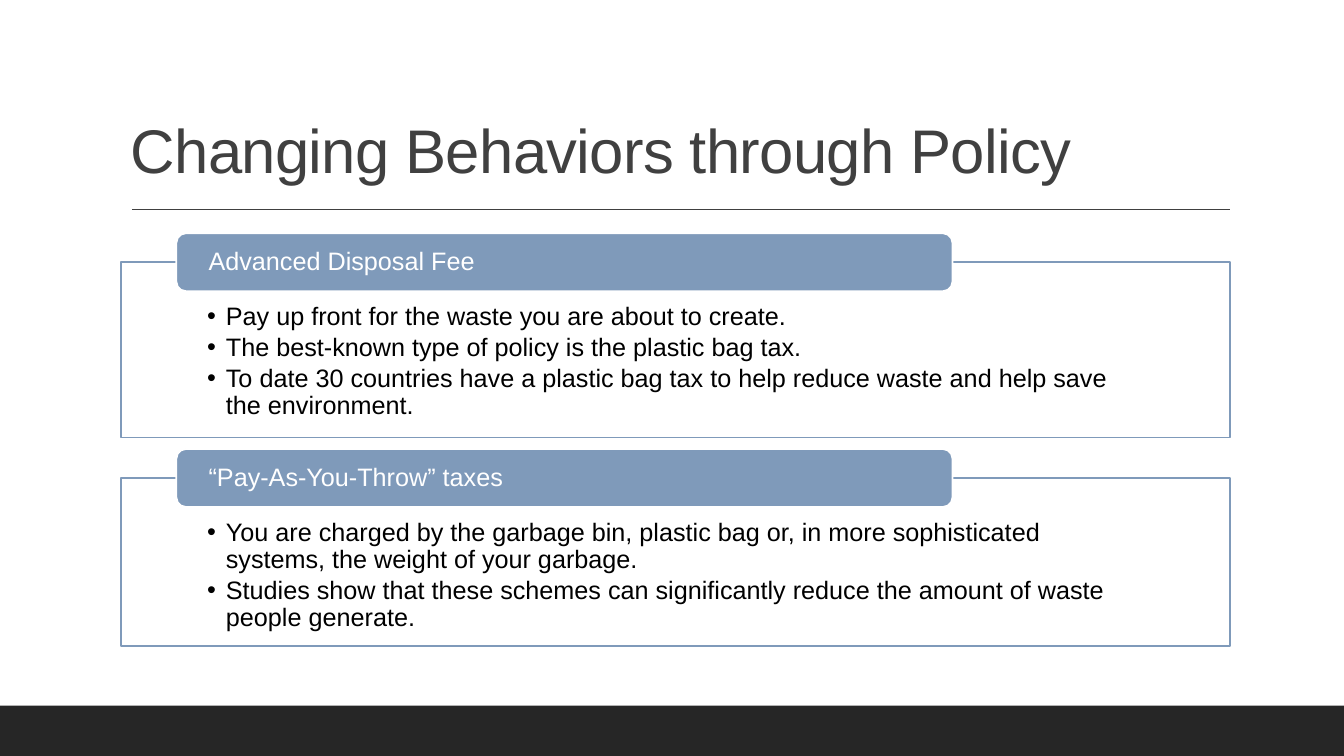
from lxml.etree import SubElement
from pptx import Presentation
from pptx.dml.color import RGBColor
from pptx.enum.shapes import MSO_CONNECTOR, MSO_SHAPE
from pptx.enum.text import MSO_ANCHOR, PP_ALIGN
from pptx.oxml.ns import qn
from pptx.util import Pt

TITLE = "Changing Behaviors through Policy"
POLICIES = [
    ("Advanced Disposal Fee", 125.3, [
        "Pay up front for the waste you are about to create.",
        "The best-known type of policy is the plastic bag tax.",
        "To date 30 countries have a plastic bag tax to help reduce waste and help save the environment.",
    ]),
    ("“Pay-As-You-Throw” taxes", 120.2, [
        "You are charged by the garbage bin, plastic bag or, in more sophisticated systems, the weight of your garbage.",
        "Studies show that these schemes can significantly reduce the amount of waste people generate.",
    ]),
]
COLORS = {"white": "FFFFFF", "black": "000000", "ink": "404040", "footer": "262626", "blue": "7F9ABA"}
FONT = "Arial"
SLIDE_WIDTH, SLIDE_HEIGHT = 960, 540
PANEL_LEFT, PANEL_WIDTH, FIRST_PANEL_TOP, PANEL_GAP = 86.4, 792, 187.3, 28.8
HEADER_LEFT, HEADER_WIDTH, HEADER_HEIGHT = 126, 554.4, 41.4
FOOTER_HEIGHT = 36
BULLET_INDENT = 13.5


def color(name):
    return RGBColor.from_string(COLORS[name])


def add_block(page, kind, left, top, width, height, fill, line=None):
    block = page.shapes.add_shape(kind, Pt(left), Pt(top), Pt(width), Pt(height))
    block.shadow.inherit = False
    block.fill.solid()
    block.fill.fore_color.rgb = color(fill)
    if line:
        block.line.color.rgb = color(line)
        block.line.width = Pt(1.25)
    else:
        block.line.fill.background()
    return block


def set_frame(shape, anchor, margins):
    frame = shape.text_frame
    frame.word_wrap = True
    frame.vertical_anchor = anchor
    frame.margin_left, frame.margin_top, frame.margin_right, frame.margin_bottom = map(Pt, margins)
    return frame


def write(para, text, size, ink):
    para.alignment = PP_ALIGN.LEFT
    para.line_spacing = 0.9
    span = para.add_run()
    span.text = text
    span.font.name = FONT
    span.font.size = Pt(size)
    span.font.color.rgb = color(ink)
    return span


def add_bullet(para):
    para.space_after = Pt(2.7)
    properties = para._p.get_or_add_pPr()
    properties.set("marL", str(Pt(BULLET_INDENT)))
    properties.set("indent", str(-Pt(BULLET_INDENT)))
    SubElement(properties, qn("a:buFont")).set("typeface", FONT)
    SubElement(properties, qn("a:buChar")).set("char", "•")


def add_policy(page, top, height, heading, points):
    panel = add_block(page, MSO_SHAPE.RECTANGLE, PANEL_LEFT, top, PANEL_WIDTH, height, "white", "blue")
    fill_color = panel.fill._xPr.find(qn("a:solidFill"))[0]
    SubElement(fill_color, qn("a:alpha")).set("val", "90000")
    frame = set_frame(panel, MSO_ANCHOR.TOP, (61.5, 29.5, 61.5, 10))
    for index, point in enumerate(points):
        para = frame.add_paragraph() if index else frame.paragraphs[0]
        write(para, point, 18, "black")
        add_bullet(para)
    header = add_block(page, MSO_SHAPE.ROUNDED_RECTANGLE, HEADER_LEFT, top - HEADER_HEIGHT / 2,
                       HEADER_WIDTH, HEADER_HEIGHT, "blue", "white")
    frame = set_frame(header, MSO_ANCHOR.MIDDLE, (21, 0, 21, 0))
    write(frame.paragraphs[0], heading, 18, "white")


def main():
    deck = Presentation()
    deck.slide_width, deck.slide_height = Pt(SLIDE_WIDTH), Pt(SLIDE_HEIGHT)
    page = deck.slides.add_slide(deck.slide_layouts[6])

    add_block(page, MSO_SHAPE.RECTANGLE, 0, SLIDE_HEIGHT - FOOTER_HEIGHT, SLIDE_WIDTH, FOOTER_HEIGHT, "footer")
    rule = page.shapes.add_connector(MSO_CONNECTOR.STRAIGHT, Pt(94.3), Pt(149.5), Pt(878.8), Pt(149.5))
    rule.line.color.rgb = color("ink")
    rule.line.width = Pt(1)
    SubElement(rule._element.spPr, qn("a:effectLst"))

    box = page.shapes.add_textbox(Pt(PANEL_LEFT), Pt(22.5), Pt(PANEL_WIDTH), Pt(114.5))
    frame = set_frame(box, MSO_ANCHOR.BOTTOM, (7.2, 3.6, 7.2, 3.6))
    span = write(frame.paragraphs[0], TITLE, 44, "ink")
    span.font._element.set("spc", "-50")

    top = FIRST_PANEL_TOP
    for heading, height, points in POLICIES:
        add_policy(page, top, height, heading, points)
        top += height + PANEL_GAP

    deck.save("out.pptx")


if __name__ == "__main__":
    main()
